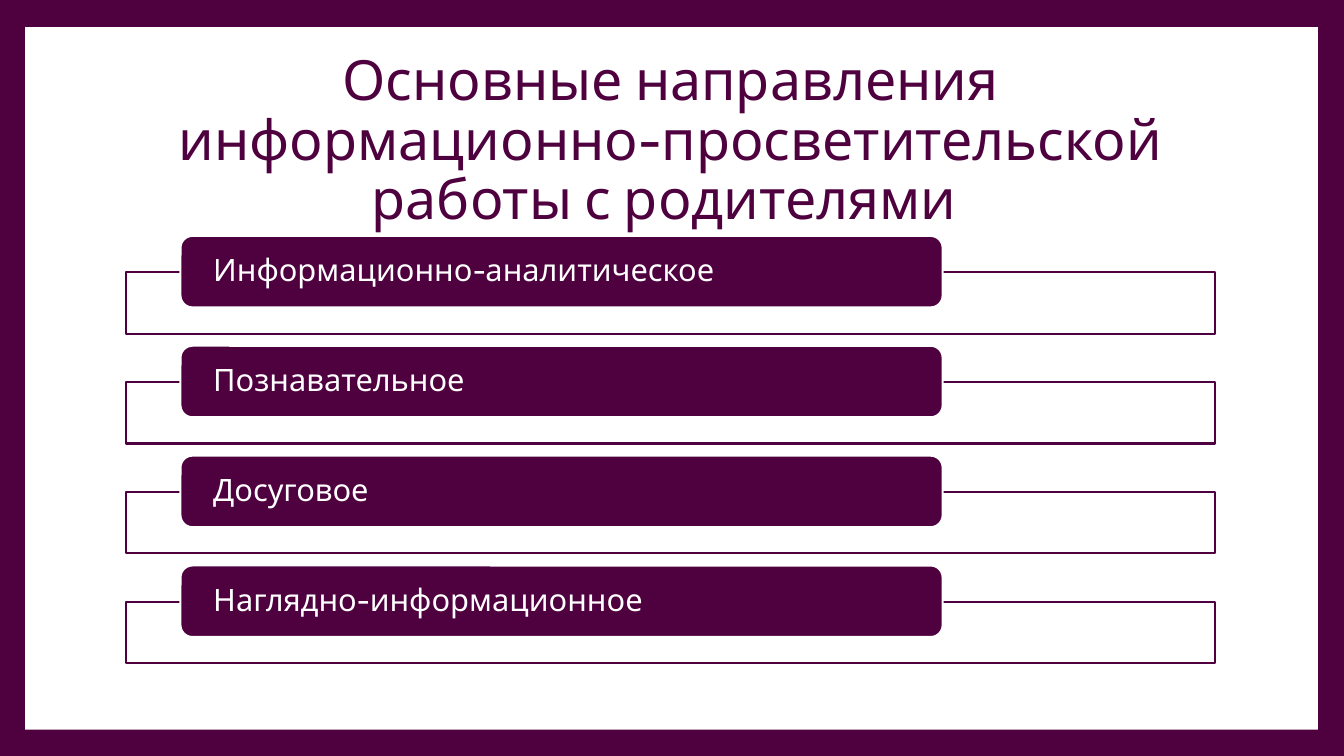
from pptx import Presentation
from pptx.dml.color import RGBColor
from pptx.enum.shapes import MSO_SHAPE
from pptx.enum.text import MSO_ANCHOR, MSO_AUTO_SIZE, PP_ALIGN
from pptx.util import Inches, Pt

COLORS = {"plum": "4E003F", "white": "FFFFFF"}
FONT = "Cabin"
TITLE = "Основные направления информационно-просветительской работы с родителями "
DIRECTIONS = [
    "Информационно-аналитическое",
    "Познавательное",
    "Досуговое",
    "Наглядно-информационное",
]
ROW_PITCH = 1.09


def color(name):
    return RGBColor.from_string(COLORS[name])


def add_block(page, kind, box, fill, line=None):
    block = page.shapes.add_shape(kind, *map(Inches, box))
    block.shadow.inherit = False
    block.fill.solid()
    block.fill.fore_color.rgb = color(fill)
    if line:
        block.line.color.rgb = color(line)
        block.line.width = Pt(1.5)
    else:
        block.line.fill.background()
    return block


def write(shape, text, size, ink, align, side_margin):
    frame = shape.text_frame
    frame_format = {
        "word_wrap": True,
        "auto_size": MSO_AUTO_SIZE.NONE,
        "vertical_anchor": MSO_ANCHOR.MIDDLE,
        "margin_left": Inches(side_margin),
        "margin_right": Inches(side_margin),
    }
    for name, value in frame_format.items():
        setattr(frame, name, value)
    para = frame.paragraphs[0]
    para.alignment = align
    para.line_spacing = 0.9
    span = para.add_run()
    span.text = text
    for name, value in {"name": FONT, "size": Pt(size), "bold": False}.items():
        setattr(span.font, name, value)
    span.font.color.rgb = color(ink)


def add_frame(page, box):
    """Plum page border around a white panel that lies behind the title."""
    page.background.fill.solid()
    page.background.fill.fore_color.rgb = color("plum")
    panel = add_block(page, MSO_SHAPE.RECTANGLE, box, "white")
    page.shapes.title._element.addprevious(panel._element)


def add_title(page, box):
    title = page.shapes.title
    for name, value in zip(("left", "top", "width", "height"), box):
        setattr(title, name, Inches(value))
    write(title, TITLE, 39.6, "plum", PP_ALIGN.CENTER, 0.1)


def add_directions(page, box):
    """Outlined bars, each with a label straddling its top edge."""
    left, top, width, height = box
    label_height = 0.71
    bar_height = 0.61
    bar_drop = height - (len(DIRECTIONS) - 1) * ROW_PITCH - bar_height
    for row, direction in enumerate(DIRECTIONS):
        row_top = top + row * ROW_PITCH
        add_block(page, MSO_SHAPE.RECTANGLE,
                  (left, row_top + bar_drop, width, bar_height), "white", "plum")
        label = add_block(page, MSO_SHAPE.ROUNDED_RECTANGLE,
                          (left + 0.05 * width, row_top, 0.7 * width, label_height),
                          "plum", "white")
        write(label, direction, 22, "white", PP_ALIGN.LEFT, 0.29)


def main():
    deck = Presentation()
    deck.slide_width, deck.slide_height = Inches(13.33), Inches(7.5)
    page = deck.slides.add_slide(deck.slide_layouts[5])
    add_frame(page, (0.25, 0.27, 12.82, 6.97))
    add_title(page, (1.25, 0.67, 10.8, 1.48))
    add_directions(page, (1.25, 2.34, 10.8, 4.24))
    deck.save("out.pptx")


if __name__ == "__main__":
    main()
